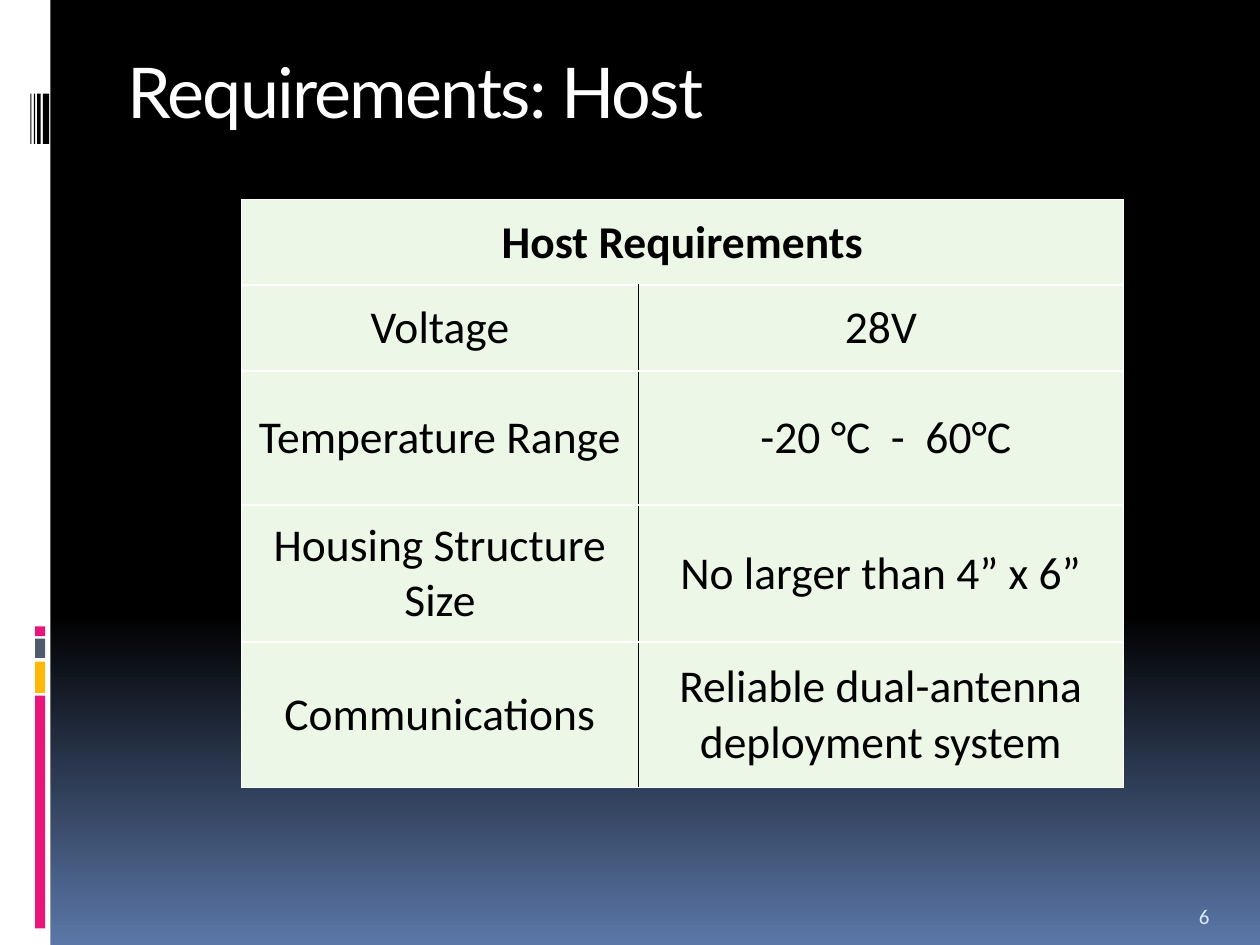
from copy import deepcopy

from lxml import etree
from pptx import Presentation
from pptx.dml import color
from pptx.enum import shapes, text
from pptx.oxml import ns
from pptx.util import Pt

INK, PAPER, MINT = "000000", "FFFFFF", "ECF7E8"
PINK, AMBER, SLATE = "EA157A", "FEB80A", "4E5B6F"
REQUIREMENTS = [
    ("Voltage", "28V"),
    ("Temperature Range", " -20 °C  -  60°C"),
    ("Housing Structure Size", "No larger than 4” x 6”"),
    ("Communications", "Reliable dual-antenna deployment system"),
]


def rgb(value):
    """Turn a hex string into a colour."""
    return color.RGBColor.from_string(value)


def paint_background(slide):
    """Fade the slide from black into blue in its lower third."""
    fill = slide.background.fill
    fill.gradient()
    fill.gradient_angle = 270
    black, blue = fill.gradient_stops
    black.color.rgb, blue.color.rgb = rgb(INK), rgb("5B77A8")
    stops = next(slide.element.iter(ns.qn("a:gsLst")))
    fade = deepcopy(stops[0])
    fade.set("pos", "65000")
    stops.insert(1, fade)


def add_block(slide, left, top, width, height, fill):
    """Add a plain filled rectangle."""
    block = slide.shapes.add_shape(
        shapes.MSO_SHAPE.RECTANGLE, Pt(left), Pt(top), Pt(width), Pt(height))
    block.shadow.inherit = False
    block.fill.solid()
    block.fill.fore_color.rgb = rgb(fill)
    block.line.fill.background()


def add_side_strip(slide, left, top, width, height):
    """Draw the white edge with its barcode and coloured bars."""
    add_block(slide, left, top, width, height, PAPER)
    for y, tall, fill in [(397.5, 133, PINK), (378, 18, AMBER),
                          (365, 11, SLATE), (358, 5.5, PINK)]:
        add_block(slide, left + 20, top + y, 5.75, tall, fill)
    for x, wide in [(24.5, 3.6), (21.2, 2), (19.4, 0.7), (17.4, 0.6)]:
        add_block(slide, left + x, top + 53.5, wide, 28.8, INK)


def add_run(paragraph, words, font, size, fill, bold=False):
    """Add one styled run to a paragraph."""
    run = paragraph.add_run()
    run.text = words
    run.font.name, run.font.size, run.font.bold = font, Pt(size), bold
    run.font.color.rgb = rgb(fill)
    return run


def add_label(slide, left, top, width, height, words, font, size, fill, anchor):
    """Add a one-line text box and return its run."""
    frame = slide.shapes.add_textbox(
        Pt(left), Pt(top), Pt(width), Pt(height)).text_frame
    frame.word_wrap = True
    frame.vertical_anchor = anchor
    return add_run(frame.paragraphs[0], words, font, size, fill)


def set_borders(cell, **sides):
    """Give the four cell sides one-point lines, white unless named."""
    properties = cell._tc.get_or_add_tcPr()
    for index, side in enumerate("LRTB"):
        line = etree.Element(ns.qn(f"a:ln{side}"), w=str(Pt(1)))
        solid = etree.SubElement(line, ns.qn("a:solidFill"))
        etree.SubElement(solid, ns.qn("a:srgbClr"), val=sides.get(side, PAPER))
        properties.insert(index, line)


def fill_cell(cell, words, bold=False, inset=True):
    """Write centred text in a mint cell."""
    cell.fill.solid()
    cell.fill.fore_color.rgb = rgb(MINT)
    cell.vertical_anchor = text.MSO_ANCHOR.MIDDLE
    if not inset:
        cell.margin_left = cell.margin_right = 0
        cell.margin_top = cell.margin_bottom = 0
    paragraph = cell.text_frame.paragraphs[0]
    paragraph.alignment = text.PP_ALIGN.CENTER
    if words:
        add_run(paragraph, words, "Calibri", 26, INK, bold)


def add_requirements(slide, left, top, width, height):
    """Build the requirements table under a merged heading."""
    table = slide.shapes.add_table(
        len(REQUIREMENTS) + 1, 2, Pt(left), Pt(top), Pt(width), Pt(height)).table
    for column, share in zip(table.columns, (0.45, 0.55)):
        column.width = Pt(width * share)
    for row, tall in zip(table.rows, (49, 49, 76.5, 78.5, 83)):
        row.height = Pt(tall)
    heading = table.cell(0, 0)
    heading.merge(table.cell(0, 1))
    for cell, words in zip(table.rows[0].cells, ("Host Requirements", "")):
        fill_cell(cell, words, bold=True, inset=False)
        set_borders(cell)
    for index, (need, value) in enumerate(REQUIREMENTS, 1):
        need_cell, value_cell = table.rows[index].cells
        fill_cell(need_cell, need, inset=index > 2)
        fill_cell(value_cell, value, inset=index > 2)
        set_borders(need_cell, R=INK)
        set_borders(value_cell, L=INK)


def main():
    """Build and save the slide."""
    deck = Presentation()
    deck.slide_width, deck.slide_height = Pt(720), Pt(540)
    slide = deck.slides.add_slide(deck.slide_layouts[6])
    paint_background(slide)
    add_side_strip(slide, 0, 0, 28.8, 540)
    title = add_label(slide, 66, 24, 426, 72, "Requirements: Host",
                      "Lato", 40, PAPER, text.MSO_ANCHOR.TOP)
    title.font._element.set("spc", "-100")
    add_requirements(slide, 138, 114, 504, 336)
    add_label(slide, 678, 505.5, 36, 28.8, "6",
              "Calibri", 12, "D6ECFF", text.MSO_ANCHOR.BOTTOM)
    deck.save("out.pptx")


if __name__ == "__main__":
    main()
